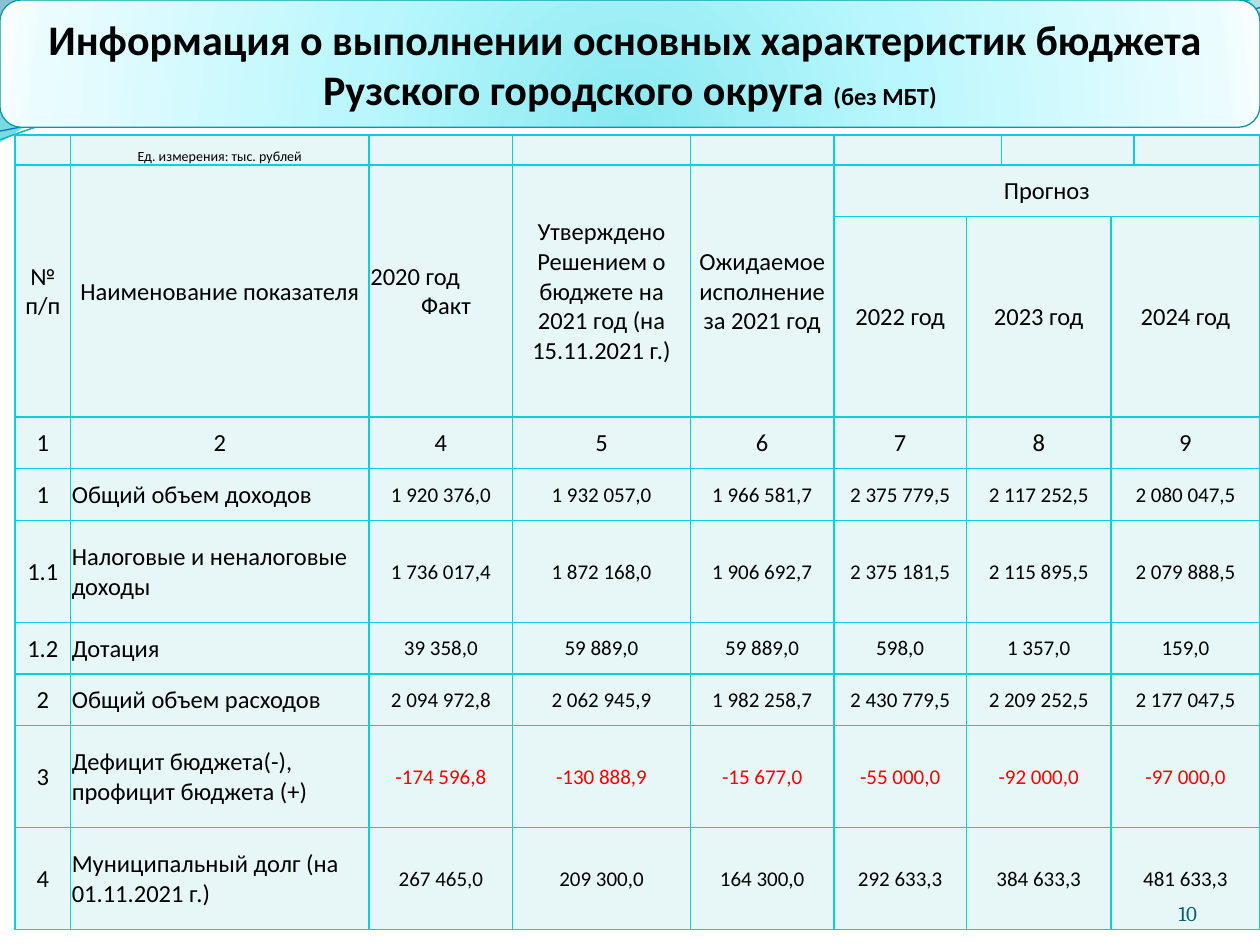
import dataclasses

import pptx
import pptx.dml.color
import pptx.enum.shapes
import pptx.enum.text
import pptx.oxml
import pptx.oxml.ns
import pptx.util

Inches, Pt = pptx.util.Inches, pptx.util.Pt
RGB = pptx.dml.color.RGBColor.from_string
ALIGN = pptx.enum.text.PP_ALIGN
ANCHOR = pptx.enum.text.MSO_ANCHOR
NS = pptx.oxml.ns.nsdecls("a")


@dataclasses.dataclass
class Theme:
    font: str = "Calibri"
    number_font: str = "Cambria"
    text: str = "000000"
    negative: str = "FF0000"
    page_number: str = "045D75"
    cell: str = "E7F7F8"
    border: str = "0BD0D9"
    banner_line: str = "069CA3"
    title_size: int = 24
    label_size: int = 14
    value_size: int = 12
    unit_size: int = 8


theme = Theme()


def set_gradient(shape, stops, direction):
    """Fill with (position, colour, opacity) stops; the outline must be set later."""
    stop_xml = "".join(
        f'<a:gs pos="{pos * 1000}"><a:srgbClr val="{color}">'
        f'<a:alpha val="{opacity * 1000}"/></a:srgbClr></a:gs>'
        for pos, color, opacity in stops)
    shape._element.spPr.append(pptx.oxml.parse_xml(
        f"<a:gradFill {NS}><a:gsLst>{stop_xml}</a:gsLst>{direction}</a:gradFill>"))


def style_runs(paragraph, size, color=theme.text, font=theme.font, bold=False):
    for run in paragraph.runs:
        run.font.name, run.font.size, run.font.bold = font, Pt(size), bold
        run.font.color.rgb = RGB(color)


deck = pptx.Presentation()
deck.slide_width, deck.slide_height = Inches(10), Inches(7.5)
slide = deck.slides.add_slide(deck.slide_layouts[5])

# Background waves: a pair of numbers is a line, six numbers are a Bezier curve
DOWN = '<a:lin ang="5400000" scaled="0"/>'
waves = [
    ([(0, 0), (4.4, -0.01), (4.76, 0.17, 6.64, 0.63, 7.58, 0.63),
      (8.53, 0.63, 9.58, 0.26, 10, 0.09), (10.01, 0.36),
      (9.83, 0.44, 8.7, 0.76, 7.46, 0.75), (6.22, 0.75, 3.82, 0.28, 2.57, 0.34),
      (1.29, 0.36, 0.46, 0.83, -0.01, 1.13)],
     [(0, "0074A1", 45), (100, "00C6CF", 55)], None),
    ([(4.79, -0.01), (5.09, 0.11, 6.82, 0.62, 7.69, 0.65),
      (8.56, 0.69, 9.61, 0.32, 10, 0.21), (10, 0)],
     [(0, "00A1A9", 30), (80, "008BBF", 45)], None),
    ([(0, 1.11), (0.48, 0.93, 1.58, 0.57, 2.77, 0.52),
      (3.95, 0.47, 5.93, 0.89, 7.13, 0.8), (8.33, 0.71, 9.38, 0.15, 9.98, -0.02)],
     None, ("0AB8BF", 0.85)),
    ([(0, 1.04), (0.47, 0.96, 1.64, 0.61, 2.83, 0.56),
      (4.03, 0.51, 5.97, 0.84, 7.17, 0.75), (8.36, 0.67, 9.41, 0.21, 10, 0.06)],
     None, ("0F6FC6", 0.75)),
]
for segments, stops, outline in waves:
    ends = [(Inches(segment[-2]), Inches(segment[-1])) for segment in segments]
    builder = slide.shapes.build_freeform(*ends[0])
    builder.add_line_segments(ends[1:], close=stops is not None)
    wave = builder.convert_to_shape()
    # Bend the straight segments that have control points
    sides = wave._element.findall(".//" + pptx.oxml.ns.qn("a:lnTo"))
    for segment, side in zip(segments[1:], sides):
        if len(segment) == 6:
            knots = "".join(
                f'<a:pt x="{Inches(x) - wave.left}" y="{Inches(y) - wave.top}"/>'
                for x, y in zip(segment[::2], segment[1::2]))
            side.getparent().replace(side, pptx.oxml.parse_xml(
                f"<a:cubicBezTo {NS}>{knots}</a:cubicBezTo>"))
    if stops:
        set_gradient(wave, stops, DOWN)
        wave.line.fill.background()
    else:
        wave.fill.background()
        wave.line.color.rgb, wave.line.width = RGB(outline[0]), Pt(outline[1])
    wave.shadow.inherit = False

# Title banner
banner = slide.shapes.add_shape(
    pptx.enum.shapes.MSO_SHAPE.ROUNDED_RECTANGLE, 0, 0, Inches(10), Inches(1.01))
set_gradient(
    banner,
    [(0, "8BE9F1", 100), (43, "B9F7FD", 100), (93, "EAFCFE", 100), (100, "F8FEFF", 100)],
    '<a:path path="circle"><a:fillToRect l="50000" t="130000" r="50000" b="-30000"/></a:path>')
banner.line.color.rgb, banner.line.width = RGB(theme.banner_line), Pt(0.75)
banner.shadow.inherit = False

# Title, raised above the banner
title = slide.shapes.title
slide.shapes._spTree.append(title._element)
title.left, title.top, title.width, title.height = (
    banner.left, banner.top, banner.width, banner.height)
heading = title.text_frame
heading.text = ("Информация о выполнении основных характеристик бюджета \n"
                "Рузского городского округа ")
heading.paragraphs[1].add_run().text = "(без МБТ)"
heading.auto_size = pptx.enum.text.MSO_AUTO_SIZE.NONE
heading.word_wrap = True
heading.vertical_anchor = ANCHOR.MIDDLE
for line in heading.paragraphs:
    line.alignment = ALIGN.CENTER
    style_runs(line, theme.title_size, bold=True)
heading.paragraphs[1].runs[1].font.size = Pt(theme.label_size)

# Budget table
column_widths = [0.44, 2.37, 1.14, 1.41, 1.14, 1.05, 0.28, 0.87, 0.18, 1]
row_heights = [0.24, 0.41, 1.59, 0.41, 0.41, 0.81, 0.41, 0.41, 0.81, 0.81]
FIELDS = [0, 1, 2, 3, 4, 5, 6, 8]  # grid column where each visible column starts
FIRST_DATA_ROW = 4
rows = [
    ["", "Ед. измерения: тыс. рублей"],
    ["№ п/п", "Наименование показателя", "2020 год\nФакт",
     "Утверждено Решением о бюджете на 2021 год (на 15.11.2021 г.)",
     "Ожидаемое исполнение за 2021 год", "Прогноз"],
    ["", "", "", "", "", "2022 год", "2023 год", "2024 год"],
    ["1", "2", "4", "5", "6", "7", "8", "9"],
    ["1", "Общий объем доходов", "1 920 376,0", "1 932 057,0", "1 966 581,7",
     "2 375 779,5", "2 117 252,5", "2 080 047,5"],
    ["1.1", "Налоговые и неналоговые доходы", "1 736 017,4", "1 872 168,0", "1 906 692,7",
     "2 375 181,5", "2 115 895,5", "2 079 888,5"],
    ["1.2", "Дотация", "39 358,0", "59 889,0", "59 889,0", "598,0", "1 357,0", "159,0"],
    ["2", "Общий объем расходов", "2 094 972,8", "2 062 945,9", "1 982 258,7",
     "2 430 779,5", "2 209 252,5", "2 177 047,5"],
    ["3", "Дефицит бюджета(-), профицит бюджета (+)", "-174 596,8", "-130 888,9",
     "-15 677,0", "-55 000,0", "-92 000,0", "-97 000,0"],
    ["4", "Муниципальный долг (на 01.11.2021 г.)", "267 465,0", "209 300,0", "164 300,0",
     "292 633,3", "384 633,3", "481 633,3"],
]
budget = slide.shapes.add_table(
    len(rows), len(column_widths), Inches(0.12), Inches(1.07),
    Inches(sum(column_widths)), Inches(sum(row_heights))).table
budget.first_row = budget.horz_banding = False
for column, width in zip(budget.columns, column_widths):
    column.width = Inches(width)
for row, height in zip(budget.rows, row_heights):
    row.height = Inches(height)

for r, texts in enumerate(rows):
    for c, text in zip(FIELDS, texts):
        budget.cell(r, c).text = text

for r in range(len(rows)):
    for c in range(len(column_widths)):
        cell = budget.cell(r, c)
        cell.margin_left = cell.margin_right = cell.margin_top = Inches(0.01)
        cell.margin_bottom = 0
        cell.vertical_anchor = ANCHOR.MIDDLE if r else ANCHOR.BOTTOM
        is_data = r >= FIRST_DATA_ROW
        is_value = is_data and c > 1
        size = theme.value_size if is_value else theme.label_size if r else theme.unit_size
        color = theme.negative if is_value and cell.text.startswith("-") else theme.text
        for paragraph in cell.text_frame.paragraphs:
            paragraph.alignment = ALIGN.LEFT if is_data and c == 1 else ALIGN.CENTER
            style_runs(paragraph, size, color)
            if not paragraph.runs:
                paragraph._p.append(pptx.oxml.parse_xml(
                    f'<a:endParaRPr {NS} sz="{theme.unit_size * 100}"/>'))
        for side in ("lnL", "lnR", "lnT", "lnB"):
            cell._tc.get_or_add_tcPr().append(pptx.oxml.parse_xml(
                f'<a:{side} {NS} w="{Pt(1)}"><a:solidFill>'
                f'<a:srgbClr val="{theme.border}"/></a:solidFill></a:{side}>'))
        cell.fill.solid()
        cell.fill.fore_color.rgb = RGB(theme.cell)
year, fact = budget.cell(1, 2).text_frame.paragraphs
year.alignment = ALIGN.LEFT
fact._p.get_or_add_pPr().set("marL", str(Inches(0.08)))

# Merged cells: unit row, header columns, forecast heading, 2023 and 2024 columns
merges = [(0, 5, 0, 6), (0, 7, 0, 8), (1, 5, 1, 9)]
merges += [(1, c, 2, c) for c in range(5)]
merges += [(r, c, r, c + 1) for r in range(2, len(rows)) for c in (6, 8)]
for top, left, bottom, right in merges:
    budget.cell(top, left).merge(budget.cell(bottom, right))

# Page number
page_number = slide.shapes.add_textbox(
    Inches(8.67), Inches(6.95), Inches(0.83), Inches(0.4)).text_frame
page_number.text = "10"
page_number.word_wrap = True
page_number.vertical_anchor = ANCHOR.BOTTOM
page_number.margin_left = page_number.margin_right = 0
page_number.margin_top = page_number.margin_bottom = 0
page_number.paragraphs[0].alignment = ALIGN.RIGHT
style_runs(page_number.paragraphs[0], theme.value_size, theme.page_number, theme.number_font)

deck.save("out.pptx")
